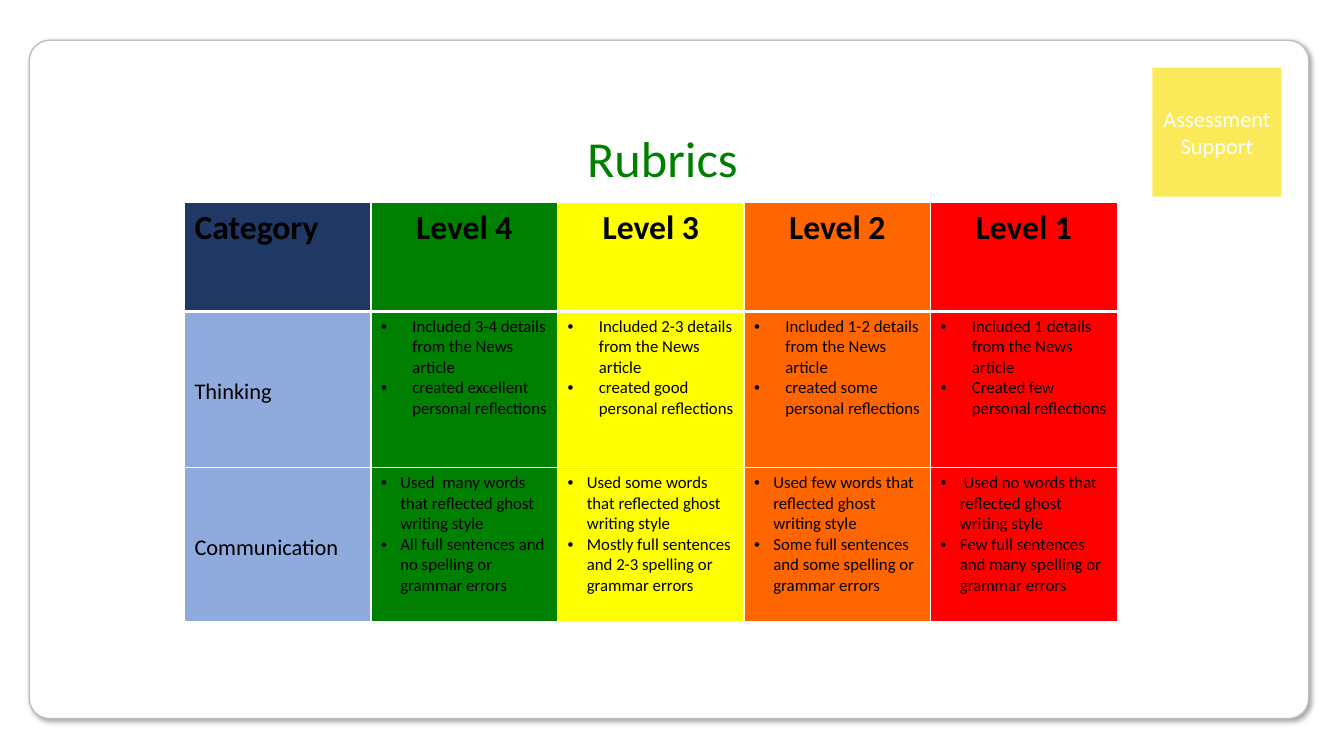
from dataclasses import dataclass

import pptx
import pptx.dml.color
import pptx.enum.shapes
import pptx.enum.text
import pptx.oxml
import pptx.oxml.ns
import pptx.util
from pptx.util import Inches

ALIGN = pptx.enum.text.PP_ALIGN
ANCHOR = pptx.enum.text.MSO_ANCHOR
SHAPE = pptx.enum.shapes.MSO_SHAPE
NAMESPACE = pptx.oxml.ns.nsdecls("a")


@dataclass(frozen=True)
class Theme:
    font: str = "Calibri"
    white: str = "FFFFFF"
    black: str = "000000"
    card_line: str = "BFBFBF"
    badge: str = "FAE959"
    title: str = "008000"
    header: str = "203864"
    category: str = "8FAADC"
    title_size: int = 36
    header_size: int = 24
    label_size: int = 16
    body_size: int = 12
    thin: int = 1
    thick: int = 3


@dataclass(frozen=True)
class Level:
    name: str
    color: str
    thinking: tuple[str, str]
    communication: tuple[str, str]


THEME = Theme()
LEVELS = (
    Level("Level 4", "008000",
          ("Included 3-4 details from the News article",
           "created excellent personal reflections"),
          ("Used  many words that reflected ghost writing style",
           "All full sentences and no spelling or grammar errors")),
    Level("Level 3", "FFFF00",
          ("Included 2-3 details from the News article",
           "created good personal reflections"),
          ("Used some words that reflected ghost writing style",
           "Mostly full sentences and 2-3 spelling or grammar errors")),
    Level("Level 2", "FF6600",
          ("Included 1-2 details from the News article",
           "created some personal reflections"),
          ("Used few words that reflected ghost writing style",
           "Some full sentences and some spelling or grammar errors")),
    Level("Level 1", "FF0000",
          ("Included 1 details from the News article",
           "Created few personal reflections"),
          (" Used no words that reflected ghost writing style",
           "Few full sentences and many spelling or grammar errors")),
)
COLUMN_WIDTH = 1.85
ROW_HEIGHTS = (1.08, 1.55, 1.53)
THINKING_INDENT = 0.31
COMMUNICATION_INDENT = 0.19
LABEL_TOP = 0.66


def rgb(color: str) -> pptx.dml.color.RGBColor:
    return pptx.dml.color.RGBColor.from_string(color)


def style(para, size: int, color: str, bold: bool = False, align=ALIGN.LEFT) -> None:
    para.alignment = align
    para.font.name = THEME.font
    para.font.size = pptx.util.Pt(size)
    para.font.bold = bold
    para.font.color.rgb = rgb(color)


def add_card(page) -> None:
    card = page.shapes.add_shape(SHAPE.ROUNDED_RECTANGLE, Inches(0.29), Inches(0.4),
                                 Inches(12.69), Inches(6.73))
    card.adjustments[0] = 0.03
    card.fill.solid()
    card.fill.fore_color.rgb = rgb(THEME.white)
    card.line.color.rgb = rgb(THEME.card_line)
    card.line.width = pptx.util.Pt(THEME.thin)
    card.shadow.inherit = False
    effects = card.element.spPr.find(pptx.oxml.ns.qn("a:effectLst"))
    effects.append(pptx.oxml.parse_xml(
        f'<a:outerShdw {NAMESPACE} blurRad="{pptx.util.Pt(4)}" dist="{pptx.util.Pt(3)}" '
        f'dir="2700000" algn="tl" rotWithShape="0"><a:srgbClr val="{THEME.black}">'
        '<a:alpha val="40000"/></a:srgbClr></a:outerShdw>'))


def add_badge(page) -> None:
    badge = page.shapes.add_shape(SHAPE.RECTANGLE, Inches(11.43), Inches(0.67),
                                  Inches(1.28), Inches(1.28))
    badge.shadow.inherit = False
    badge.fill.solid()
    badge.fill.fore_color.rgb = rgb(THEME.badge)
    badge.line.fill.background()
    badge.text_frame.text = "Assessment Support"
    badge.text_frame.vertical_anchor = ANCHOR.MIDDLE
    style(badge.text_frame.paragraphs[0], THEME.label_size, THEME.white, align=ALIGN.CENTER)


def set_title(page) -> None:
    """Place the title in front of the card."""
    title = page.shapes.title
    title.left, title.top = Inches(2.3), Inches(1.21)
    title.width, title.height = Inches(8.54), Inches(0.71)
    frame = title.text_frame
    frame.text = "Rubrics"
    frame.word_wrap = True
    frame.auto_size = pptx.enum.text.MSO_AUTO_SIZE.SHAPE_TO_FIT_TEXT
    frame.vertical_anchor = ANCHOR.TOP
    style(frame.paragraphs[0], THEME.title_size, THEME.title, align=ALIGN.CENTER)
    page.shapes.element.append(title.element)


def paint_cell(cell, color: str, top: int, bottom: int) -> None:
    """Fill a cell and give it white borders."""
    cell.fill.solid()
    cell.fill.fore_color.rgb = rgb(color)
    properties = cell.fill._xPr
    widths = {"L": THEME.thin, "R": THEME.thin, "T": top, "B": bottom}
    for index, (side, width) in enumerate(widths.items()):
        properties.insert(index, pptx.oxml.parse_xml(
            f'<a:ln{side} {NAMESPACE} w="{pptx.util.Pt(width)}"><a:solidFill>'
            f'<a:srgbClr val="{THEME.white}"/></a:solidFill></a:ln{side}>'))


def write_bullets(cell, items: tuple[str, str], indent: float) -> None:
    cell.text_frame.text = "\n".join(items)
    for para in cell.text_frame.paragraphs:
        properties = para._p.get_or_add_pPr()
        properties.set("marL", str(Inches(indent)))
        properties.set("indent", str(-Inches(indent)))
        properties.append(pptx.oxml.parse_xml(f'<a:buFont {NAMESPACE} typeface="Arial"/>'))
        properties.append(pptx.oxml.parse_xml(f'<a:buChar {NAMESPACE} char="•"/>'))
        style(para, THEME.body_size, THEME.black)


def write_line(cell, text: str, size: int, bold: bool = False, align=ALIGN.LEFT) -> None:
    cell.text_frame.text = text
    style(cell.text_frame.paragraphs[0], size, THEME.black, bold, align)


def add_rubric(page) -> None:
    columns = len(LEVELS) + 1
    table = page.shapes.add_table(len(ROW_HEIGHTS), columns, Inches(1.83), Inches(2.01),
                                  Inches(COLUMN_WIDTH * columns),
                                  Inches(sum(ROW_HEIGHTS))).table
    table.first_row = table.horz_banding = False
    for column in table.columns:
        column.width = Inches(COLUMN_WIDTH)
    for row, height in zip(table.rows, ROW_HEIGHTS):
        row.height = Inches(height)

    write_line(table.cell(0, 0), "Category", THEME.header_size, bold=True)
    for row, label in enumerate(("Thinking", "Communication"), start=1):
        write_line(table.cell(row, 0), label, THEME.label_size)
        table.cell(row, 0).margin_top = Inches(LABEL_TOP)
    for column, level in enumerate(LEVELS, start=1):
        write_line(table.cell(0, column), level.name, THEME.header_size, True, ALIGN.CENTER)
        write_bullets(table.cell(1, column), level.thinking, THINKING_INDENT)
        write_bullets(table.cell(2, column), level.communication, COMMUNICATION_INDENT)

    level_colors = [level.color for level in LEVELS]
    for row in range(len(ROW_HEIGHTS)):
        first_color = THEME.header if row == 0 else THEME.category
        top = THEME.thick if row == 1 else THEME.thin
        bottom = THEME.thick if row == 0 else THEME.thin
        for column, color in enumerate([first_color, *level_colors]):
            paint_cell(table.cell(row, column), color, top, bottom)


def main() -> None:
    deck = pptx.Presentation()
    deck.slide_width, deck.slide_height = Inches(13.33), Inches(7.5)
    page = deck.slides.add_slide(deck.slide_layouts.get_by_name("Title Only"))
    add_card(page)
    add_badge(page)
    add_rubric(page)
    set_title(page)
    deck.save("out.pptx")


if __name__ == "__main__":
    main()
